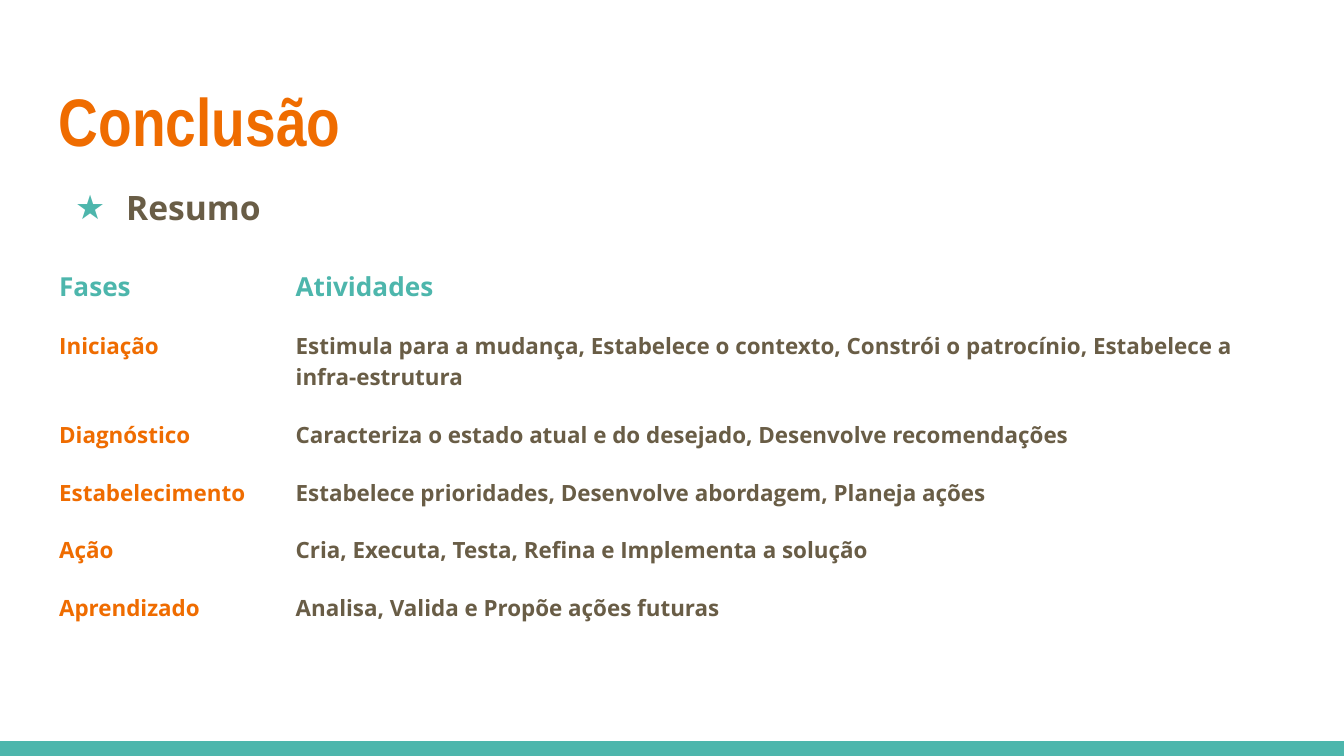
from pptx import Presentation
from pptx.dml.color import RGBColor
from pptx.enum.shapes import MSO_SHAPE as Shape
from pptx.enum.text import MSO_ANCHOR as Anchor
from pptx.oxml import parse_xml
from pptx.oxml.ns import nsdecls
from pptx.util import Inches, Pt

TEAL, ORANGE, BROWN = "4DB6AC", "EF6C00", "695D46"
PAD = Inches(0.1)


def rgb(code):
    return RGBColor.from_string(code)


def write(frame, text, size, color, font="Open Sans"):
    frame.margin_left = frame.margin_right = PAD
    frame.margin_top = frame.margin_bottom = PAD
    frame.word_wrap = True
    run = frame.paragraphs[0].add_run()
    run.text = text
    run.font.name, run.font.size, run.font.bold = font, Pt(size), True
    run.font.color.rgb = rgb(color)


# Widescreen 16:9 slide
deck = Presentation()
deck.slide_width = Inches(10)
deck.slide_height = deck.slide_width * 9 // 16
slide = deck.slides.add_slide(deck.slide_layouts[6])
W, H = deck.slide_width, deck.slide_height
left = Inches(0.34)
content_width = W - 2 * left

# Footer band
band_height = Inches(0.11)
band = slide.shapes.add_shape(Shape.RECTANGLE, 0, H - band_height, W, band_height)
band.shadow.inherit = False
band.fill.solid()
band.fill.fore_color.rgb = rgb(TEAL)
band.line.fill.background()

# Title
title = slide.shapes.add_textbox(left, Inches(0.49), content_width, Inches(0.77))
title.text_frame.vertical_anchor = Anchor.TOP
write(title.text_frame, "Conclusão", 36, ORANGE, "Arial Narrow")

# Phases and their activities
phases = [
    ("Fases", "Atividades"),
    ("Iniciação", "Estimula para a mudança, Estabelece o contexto, "
                  "Constrói o patrocínio, Estabelece a infra-estrutura"),
    ("Diagnóstico", "Caracteriza o estado atual e do desejado, Desenvolve recomendações"),
    ("Estabelecimento", "Estabelece prioridades, Desenvolve abordagem, Planeja ações"),
    ("Ação", "Cria, Executa, Testa, Refina e Implementa a solução"),
    ("Aprendizado", "Analisa, Valida e Propõe ações futuras"),
]
column_widths = [1.76, 7.38]
row_heights = [0.46, 0.66] + [0.43] * 4
table = slide.shapes.add_table(
    len(phases), len(column_widths), left, Inches(1.9),
    Inches(sum(column_widths)), Inches(sum(row_heights)),
).table
table.first_row = table.horz_banding = False
for column, width in zip(table.columns, column_widths):
    column.width = Inches(width)
for r, (texts, height) in enumerate(zip(phases, row_heights)):
    table.rows[r].height = Inches(height)
    size, colors = (14, (TEAL, TEAL)) if r == 0 else (12, (ORANGE, BROWN))
    for c, (text, color) in enumerate(zip(texts, colors)):
        cell = table.cell(r, c)
        cell.fill.background()
        cell.margin_left = cell.margin_right = PAD
        cell.margin_top = cell.margin_bottom = PAD
        write(cell.text_frame, text, size, color)

# Starred subtitle
summary = slide.shapes.add_textbox(left, Inches(1.29), Inches(1.93), Inches(0.59))
props = summary.text_frame.paragraphs[0]._p.get_or_add_pPr()
props.set("marL", str(Inches(0.5)))
props.set("indent", str(-Inches(0.38)))
for bullet in (
    f'<a:buClr {nsdecls("a")}><a:srgbClr val="{TEAL}"/></a:buClr>',
    f'<a:buFont {nsdecls("a")} typeface="Open Sans"/>',
    f'<a:buChar {nsdecls("a")} char="★"/>',
):
    props.append(parse_xml(bullet))
write(summary.text_frame, "Resumo", 18, BROWN)

deck.save("out.pptx")
